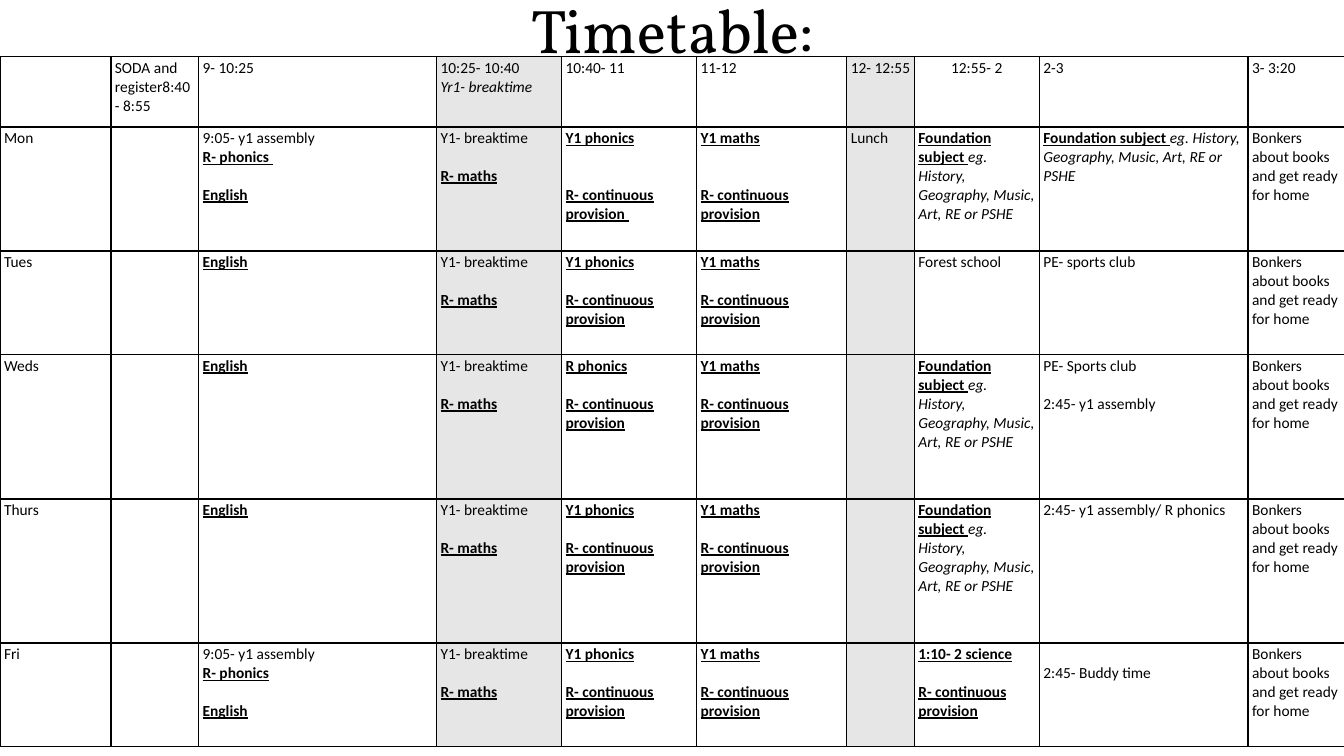
import dataclasses

import pptx
import pptx.dml.color
import pptx.enum.text
import pptx.oxml
import pptx.oxml.ns
import pptx.util

Inches = pptx.util.Inches
Pt = pptx.util.Pt
Align = pptx.enum.text.PP_ALIGN


@dataclasses.dataclass(frozen=True)
class Theme:
    head: str = "Vollkorn"
    body: str = "Calibri"
    big: float = 44
    small: float = 11
    line: float = 13.4  # height of one line of cell text, in points
    ink: str = "000000"
    shade: str = "E7E6E6"
    rule: float = 1


THEME = Theme()
WIDTHS = [1.1, 0.87, 2.36, 1.24, 1.34, 1.49, 0.67, 1.24, 2.07, 0.97]
HEIGHTS = [0.7, 1.23, 1.03, 1.43, 1.43, 1.03]
SHADED = (3, 6)  # break and lunch columns


# Text model: a paragraph is a gap in lines and its (text, style) runs
def para(text, style="", gap=0):
    return gap, [(text, style)]


def bold(text, gap=0):
    return para(text, "b", gap)


# Cell contents that recur through the week
TOPIC = [(0, [("Foundation subject ", "b"),
              ("eg. History, Geography, Music, Art, RE or PSHE", "i")])]
BREAK = [para("Y1- breaktime"), bold("R- maths", 1)]
HOME = [para("Bonkers about books and get ready for home")]
ENGLISH = [bold("English")]


def lesson(name, gap=1, end=""):
    return [bold(name), bold("R- continuous provision" + end, gap)]


def opening(end=""):
    return [para("9:05- y1 assembly"), bold("R- phonics" + end),
            bold("English", 1)]


def day(name, first, early, maths, lunch, noon, late):
    return [[para(name)], [], first, BREAK, early, maths, lunch,
            noon, late, HOME]


def week():
    times = [[], [para("SODA and register8:40- 8:55")], [para("9- 10:25")],
             [para("10:25- 10:40"), para("Yr1- breaktime", "i")],
             [para("10:40- 11")], [para("11-12")], [para("12- 12:55")],
             [para("12:55- 2")], [para("2-3")], [para("3- 3:20")]]
    phonics = lesson("Y1 phonics")
    maths = lesson("Y1 maths")
    return [
        times,
        day("Mon", opening(" "), lesson("Y1 phonics", 2, " "),
            lesson("Y1 maths", 2), [para("Lunch")], TOPIC, TOPIC),
        day("Tues", ENGLISH, phonics, maths, [],
            [para("Forest school")], [para("PE- sports club")]),
        day("Weds", ENGLISH, lesson("R phonics"), maths, [], TOPIC,
            [para("PE- Sports club"), para("2:45- y1 assembly", gap=1)]),
        day("Thurs", ENGLISH, phonics, maths, [], TOPIC,
            [para("2:45- y1 assembly/ R phonics")]),
        day("Fri", opening(), phonics, maths, [],
            lesson("1:10- 2 science"), [para("2:45- Buddy time", gap=1)]),
    ]


# Text formatting
def add_run(line, text, face, size, style=""):
    run = line.add_run()
    run.text = text
    font = run.font
    font.name = face
    font.size = Pt(size)
    font.color.rgb = pptx.dml.color.RGBColor.from_string(THEME.ink)
    font.bold = font.underline = style == "b"
    font.italic = style == "i"


def write(cell, paras):
    frame = cell.text_frame
    for index, (gap, runs) in enumerate(paras):
        line = frame.add_paragraph() if index else frame.paragraphs[0]
        line.alignment = Align.LEFT
        if index:
            line.space_before = Pt(gap * THEME.line)
        else:
            # A first line that starts lower takes its gap from the margin
            cell.margin_top += Pt(gap * THEME.line)
        for text, style in runs:
            add_run(line, text, THEME.body, THEME.small, style)


# Cell formatting
def border(cell):
    props = cell._tc.get_or_add_tcPr()
    space = pptx.oxml.ns.nsdecls("a")
    for side in "LRTB":
        props.append(pptx.oxml.parse_xml(
            f'<a:ln{side} {space} w="{Pt(THEME.rule)}"><a:solidFill>'
            f'<a:srgbClr val="{THEME.ink}"/></a:solidFill></a:ln{side}>'))


def dress(cell, shaded):
    cell.margin_left = cell.margin_right = Inches(0.04)
    cell.margin_top = cell.margin_bottom = Inches(0.02)
    border(cell)
    if shaded:
        cell.fill.solid()
        cell.fill.fore_color.rgb = pptx.dml.color.RGBColor.from_string(
            THEME.shade)
    else:
        cell.fill.background()


# Slide parts
def add_title(slide, text):
    title = slide.shapes.title
    title.left, title.top = Inches(0.92), Inches(-0.39)
    title.width, title.height = Inches(11.5), Inches(1.45)
    frame = title.text_frame
    frame.auto_size = pptx.enum.text.MSO_AUTO_SIZE.NONE
    frame.vertical_anchor = pptx.enum.text.MSO_ANCHOR.MIDDLE
    line = frame.paragraphs[0]
    line.alignment = Align.CENTER
    line.line_spacing = 0.9
    add_run(line, text, THEME.head, THEME.big)


def add_grid(slide, rows):
    grid = slide.shapes.add_table(
        len(HEIGHTS), len(WIDTHS), Inches(0), Inches(0.56),
        Inches(sum(WIDTHS)), Inches(sum(HEIGHTS))).table
    grid.first_row = grid.horz_banding = False
    for column, width in zip(grid.columns, WIDTHS):
        column.width = Inches(width)
    for row, height in zip(grid.rows, HEIGHTS):
        row.height = Inches(height)
    for y, row in enumerate(rows):
        for x, paras in enumerate(row):
            cell = grid.cell(y, x)
            dress(cell, x in SHADED)
            write(cell, paras)
    # Only the first afternoon time is centred
    grid.cell(0, 7).text_frame.paragraphs[0].alignment = Align.CENTER


def main():
    deck = pptx.Presentation()
    deck.slide_width, deck.slide_height = Inches(13.33), Inches(7.5)
    slide = deck.slides.add_slide(deck.slide_layouts[5])
    add_title(slide, "Timetable:")
    add_grid(slide, week())
    deck.save("out.pptx")


if __name__ == "__main__":
    main()
